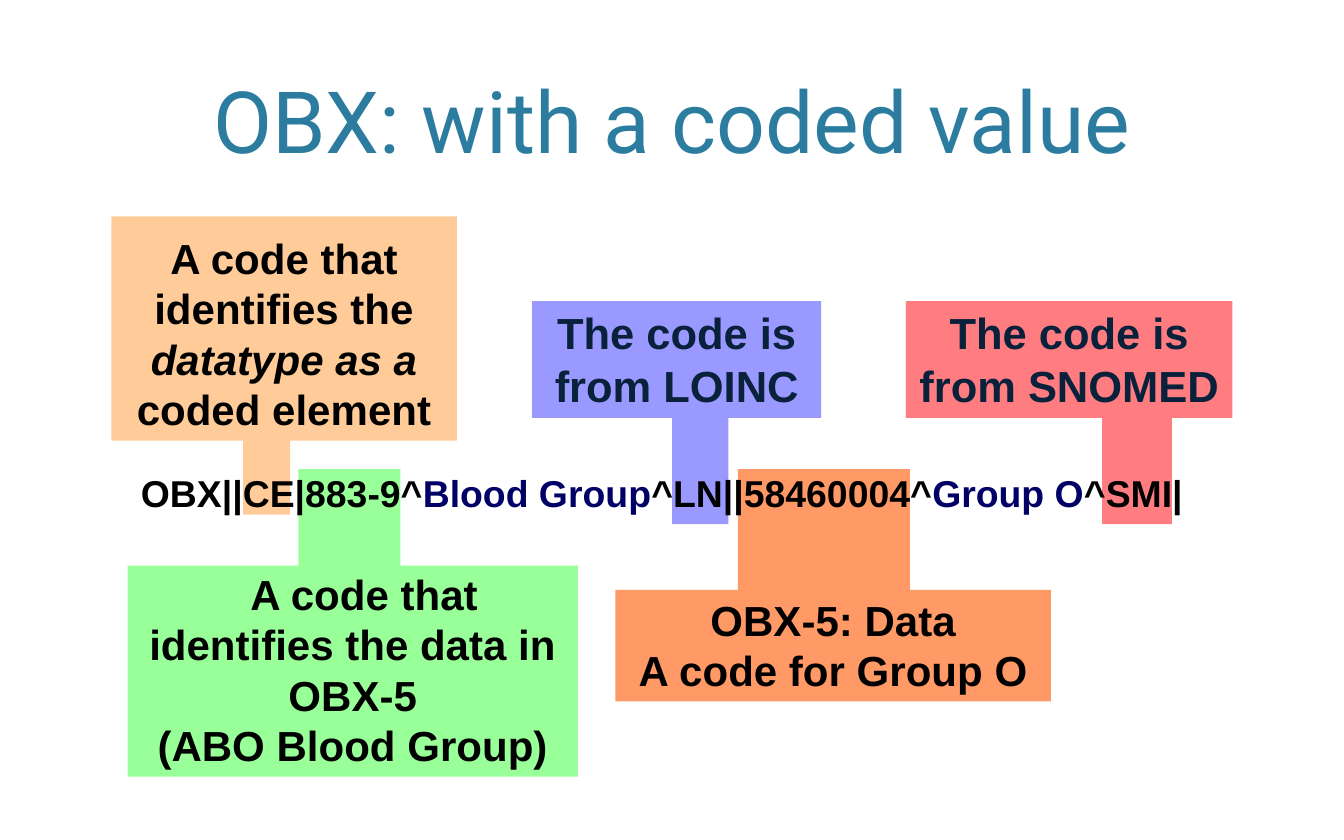
from pptx import Presentation
from pptx.dml.color import RGBColor
from pptx.enum.shapes import MSO_SHAPE as SHAPE
from pptx.enum.text import MSO_ANCHOR as ANCHOR, MSO_AUTO_SIZE as AUTO, PP_ALIGN as ALIGN
from pptx.util import Emu, Pt

PX = 9144  # EMU per px, 100 px to the inch

BLACK = RGBColor(0x00, 0x00, 0x00)
NAVY = RGBColor(0x00, 0x00, 0x66)
INK = RGBColor(0x09, 0x21, 0x3B)
TEAL = RGBColor(0x2C, 0x7C, 0x9F)
RED = RGBColor(0xFF, 0x7C, 0x80)
VIOLET = RGBColor(0x99, 0x99, 0xFF)
ORANGE = RGBColor(0xFF, 0x99, 0x66)
PEACH = RGBColor(0xFF, 0xCC, 0x99)
GREEN = RGBColor(0x99, 0xFF, 0x99)

BODY = dict(name="Arial", size=Pt(22.5), bold=True, color=BLACK)
SYSTEM = {**BODY, "size": Pt(23.3), "color": INK}
MESSAGE = {**BODY, "size": Pt(20)}
TITLE = dict(name="Roboto", size=Pt(46), bold=False, color=TEAL)

LOW = dict(vertical_anchor=ANCHOR.BOTTOM)
SNUG = dict(vertical_anchor=ANCHOR.TOP, auto_size=AUTO.SHAPE_TO_FIT_TEXT,
            margin_left=8 * PX, margin_right=8 * PX,
            margin_top=4 * PX, margin_bottom=4 * PX)


class Deck:
    def __init__(self, width, height):
        self.prs = Presentation()
        self.prs.slide_width, self.prs.slide_height = self.emu(width, height)
        self.s = self.prs.slides.add_slide(self.prs.slide_layouts[6])

    @staticmethod
    def emu(*lengths):
        return [Emu(n * PX) for n in lengths]

    def add_lines(self, sp, lines, font, frame, align=ALIGN.CENTER):
        """Fill a shape with lines, each a list of (text, font changes)."""
        tf = sp.text_frame
        for key, value in {"word_wrap": True, **frame}.items():
            setattr(tf, key, value)
        for i, line in enumerate(lines):
            p = tf.add_paragraph() if i else tf.paragraphs[0]
            p.alignment = align
            for text, changes in line:
                r = p.add_run()
                r.text = text
                style = {**font, **changes}
                r.font.color.rgb = style.pop("color")
                for key, value in style.items():
                    setattr(r.font, key, value)
        return tf

    def text(self, box, lines, font, frame, align=ALIGN.CENTER):
        sp = self.s.shapes.add_textbox(*self.emu(*box))
        self.add_lines(sp, lines, font, frame, align)

    def callout(self, color, stem, box, lines, font, frame):
        """Group a text box with the stem that marks its field."""
        group = self.s.shapes.add_group_shape()
        for rect in (stem, box):
            sp = group.shapes.add_shape(SHAPE.RECTANGLE, *self.emu(*rect))
            sp.shadow.inherit = False
            sp.fill.solid()
            sp.fill.fore_color.rgb = color
            sp.line.fill.background()
        return self.add_lines(sp, lines, font, frame)


def plain(*lines):
    return [[(line, {})] for line in lines]


def main():
    deck = Deck(1000, 625)
    deck.callout(RED, (820, 307, 52, 83), (674, 224, 243, 87),
                 plain("The code is", "from SNOMED"), SYSTEM, SNUG)
    deck.callout(VIOLET, (500, 307, 42, 83), (396, 224, 215, 87),
                 plain("The code is", "from LOINC"), SYSTEM, SNUG)
    deck.callout(ORANGE, (549, 349, 128, 143), (458, 439, 324, 83),
                 plain("OBX-5: Data", "A code for Group O"), BODY, LOW)
    deck.callout(PEACH, (181, 279, 35, 104), (83, 161, 257, 167),
                 [[("A code that identifies the ", {}), ("datatype as a", {"italic": True})],
                  [("coded element", {})]], BODY, LOW)
    deck.text((60, 10, 880, 122), plain("OBX: with a coded value"), TITLE, LOW)
    tf = deck.callout(GREEN, (222, 349, 76, 72), (95, 421, 335, 157),
                      plain("A code that identifies the data in OBX-5",
                            "(ABO Blood Group)"), BODY, LOW)
    tf.paragraphs[0]._p.get_or_add_pPr().set("indent", str(17 * PX))

    navy = {"color": NAVY}
    segment = [("OBX||CE|883-9^", {}), ("Blood Group", navy), ("^LN||58460004^", {}),
               ("Group O", navy), ("^SMI|", {})]
    deck.text((95, 345, 802, 44), [segment], MESSAGE,
              dict(word_wrap=False, auto_size=AUTO.SHAPE_TO_FIT_TEXT), ALIGN.LEFT)
    deck.prs.save("out.pptx")


if __name__ == "__main__":
    main()
